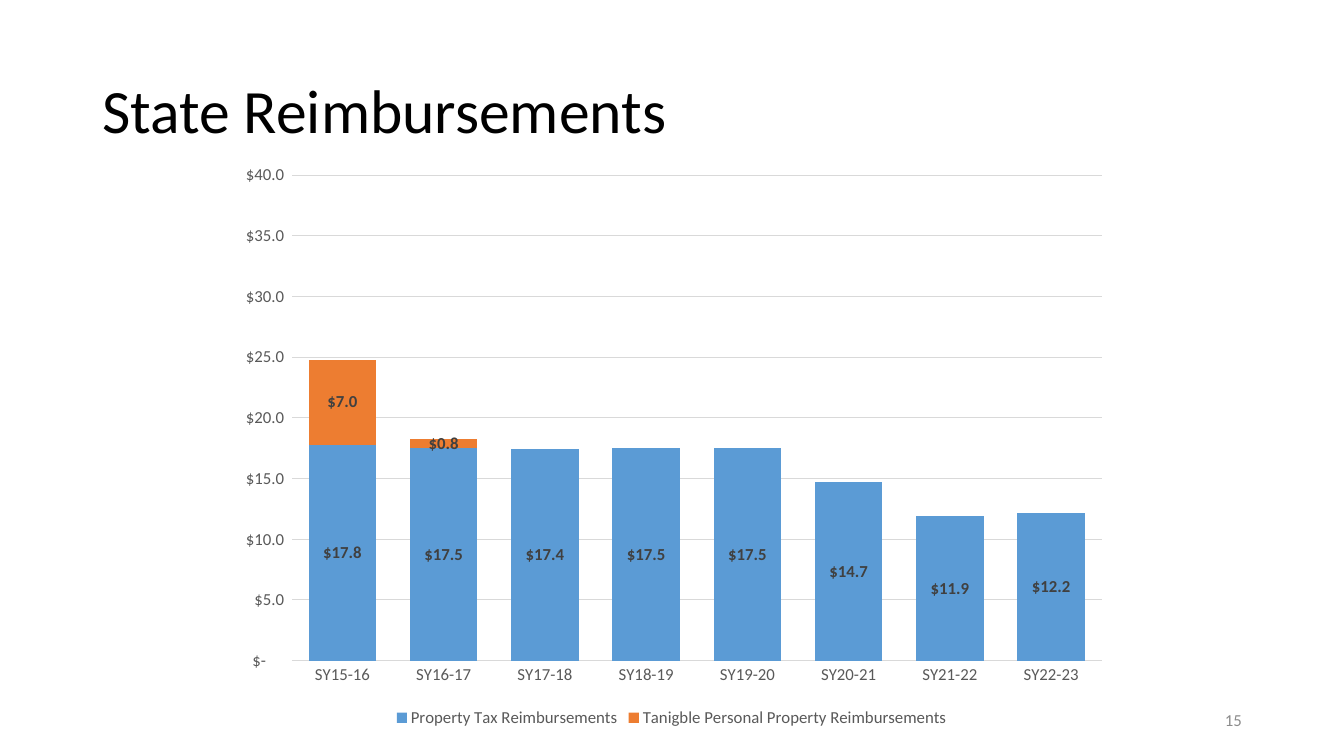
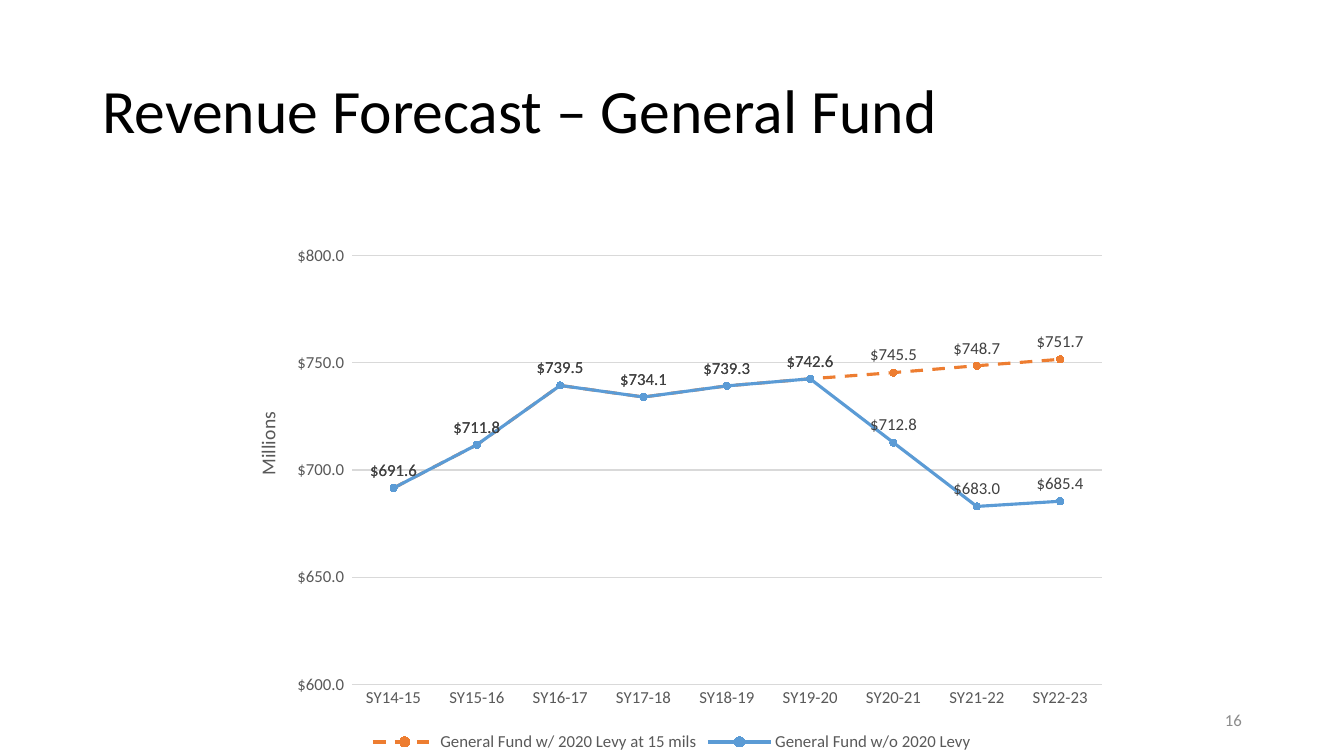
"""Build two finance slides: state reimbursements and the general fund forecast."""
from lxml.etree import SubElement
from pptx import Presentation
from pptx.chart.data import CategoryChartData
from pptx.dml.color import RGBColor
from pptx.enum.chart import XL_CHART_TYPE as Kind, XL_LABEL_POSITION as Pos
from pptx.enum.chart import XL_LEGEND_POSITION as Side, XL_MARKER_STYLE as Mark
from pptx.enum.chart import XL_TICK_MARK as Tick
from pptx.enum.dml import MSO_LINE as Dash
from pptx.enum.text import MSO_ANCHOR as Anchor, PP_ALIGN as Align
from pptx.oxml.ns import qn
from pptx.util import Cm, Pt

BLACK = RGBColor(0x00, 0x00, 0x00)
DARK = RGBColor(0x40, 0x40, 0x40)
GREY = RGBColor(0x59, 0x59, 0x59)
MUTED = RGBColor(0x8C, 0x8C, 0x8C)
PALE = RGBColor(0xD9, 0xD9, 0xD9)
BLUE = RGBColor(0x5B, 0x9B, 0xD5)
ORANGE = RGBColor(0xED, 0x7D, 0x31)
FACE = "Calibri"
MONEY = '_("$"* #,##0.0_);_("$"* \\(#,##0.0\\);_("$"* "-"??_);_(@_)'

YEARS = [f"SY{y}-{y + 1}" for y in range(14, 23)]
PAST = [691.6, 711.8, 739.5, 734.1, 739.3, 742.6]
PAGES = [
    dict(
        title="State Reimbursements", number="15", kind=Kind.COLUMN_STACKED,
        top=3.89, height=14.55, years=YEARS[1:], low=0, high=40, step=5,
        plot=dict(x=0.076, y=0.036, w=0.904, h=0.841), unit=None,
        series=[
            ("Property Tax Reimbursements", BLUE,
             [17.8, 17.5, 17.4, 17.5, 17.5, 14.7, 11.9, 12.2]),
            ("Tanigble Personal Property Reimbursements", ORANGE,
             [7.0, 0.8] + [None] * 6),
        ],
    ),
    dict(
        title="Revenue Forecast – General Fund", number="16", kind=Kind.LINE_MARKERS,
        top=3.99, height=15.06, years=YEARS, low=600, high=840, step=50,
        plot=dict(x=0.143, y=0.02, w=0.837, h=0.86), unit="Millions",
        series=[
            ("General Fund w/ 2020 Levy at 15 mils", ORANGE,
             PAST + [745.5, 748.7, 751.7]),
            ("General Fund w/o 2020 Levy", BLUE,
             PAST + [712.8, 683.0, 685.4]),
        ],
    ),
]


def write(slide, text, box, size, color, align):
    """Add one line of text, centred vertically in its box."""
    frame = slide.shapes.add_textbox(*map(Cm, box)).text_frame
    frame.word_wrap = True
    frame.vertical_anchor = Anchor.MIDDLE
    para = frame.paragraphs[0]
    para.alignment = align
    para.line_spacing = 0.9
    run = para.add_run()
    run.text = text
    run.font.name = FACE
    run.font.size = Pt(size)
    run.font.color.rgb = color


def place(parent, index, spots, inner=False):
    """Give a chart part a fixed position, in shares of the chart."""
    for old in parent.findall(qn("c:layout")):
        parent.remove(old)
    layout = SubElement(parent, qn("c:layout"))
    parent.insert(index, layout)
    manual = SubElement(layout, qn("c:manualLayout"))
    if inner:
        SubElement(manual, qn("c:layoutTarget")).set("val", "inner")
    for key in "xy":
        SubElement(manual, qn(f"c:{key}Mode")).set("val", "edge")
    for key, share in spots.items():
        SubElement(manual, qn(f"c:{key}")).set("val", str(share))


deck = Presentation()
deck.slide_width = Cm(33.87)
deck.slide_height = Cm(19.05)

for page in PAGES:
    slide = deck.slides.add_slide(deck.slide_layouts[6])
    write(slide, page["title"], (2.33, 1.02, 29.21, 3.68), 44, BLACK, Align.LEFT)
    write(slide, page["number"], (23.93, 17.65, 7.62, 1.02), 12, MUTED, Align.RIGHT)

    data = CategoryChartData(number_format=MONEY)
    data.categories = page["years"]
    for name, color, values in page["series"]:
        data.add_series(name, values)
    box = map(Cm, (5.64, page["top"], 22.58, page["height"]))
    chart = slide.shapes.add_chart(page["kind"], *box, data).chart
    chart.has_title = False
    chart.font.name = FACE
    chart.font.size = Pt(12)
    chart.font.color.rgb = GREY
    chart.has_legend = True
    chart.legend.position = Side.BOTTOM
    chart.legend.include_in_layout = False
    place(chart.plots[0]._element.getparent(), 0, page["plot"], inner=True)

    cats, vals = chart.category_axis, chart.value_axis
    for axis in (cats, vals):
        axis.major_tick_mark = axis.minor_tick_mark = Tick.NONE
    cats.format.line.color.rgb = PALE
    cats.format.line.width = Pt(0.75)
    vals.format.line.fill.background()
    vals.minimum_scale = page["low"]
    vals.maximum_scale = page["high"]
    vals.major_unit = page["step"]
    vals.tick_labels.number_format = MONEY
    vals.tick_labels.number_format_is_linked = False
    vals.major_gridlines.format.line.color.rgb = PALE
    vals.major_gridlines.format.line.width = Pt(0.75)
    if page["unit"]:
        run = vals.axis_title.text_frame.paragraphs[0].add_run()
        run.text = page["unit"]
        run.font.name = FACE
        run.font.size = Pt(14)
        run.font.bold = False
        run.font.color.rgb = GREY
        place(vals.axis_title._element, 1, dict(x=0.03, y=0.418))

    plot = chart.plots[0]
    plot.vary_by_categories = False
    stacked = page["kind"] == Kind.COLUMN_STACKED
    if stacked:
        plot.gap_width = 50
        plot.overlap = 100
    for series, (name, color, values) in zip(plot.series, page["series"]):
        if stacked:
            series.format.fill.solid()
            series.format.fill.fore_color.rgb = color
        else:
            series.smooth = False
            series.format.line.color.rgb = color
            series.format.line.width = Pt(2.25)
            if color == ORANGE:
                series.format.line.dash_style = Dash.DASH
            series.marker.style = Mark.CIRCLE
            series.marker.size = 5
            series.marker.format.fill.solid()
            series.marker.format.fill.fore_color.rgb = color
            series.marker.format.line.color.rgb = color
        labels = series.data_labels
        labels.show_value = True
        labels.position = Pos.CENTER if stacked else Pos.ABOVE
        labels.number_format = MONEY
        labels.number_format_is_linked = False
        labels.font.name = FACE
        labels.font.size = Pt(12)
        labels.font.bold = stacked
        labels.font.color.rgb = DARK

deck.save("out.pptx")
